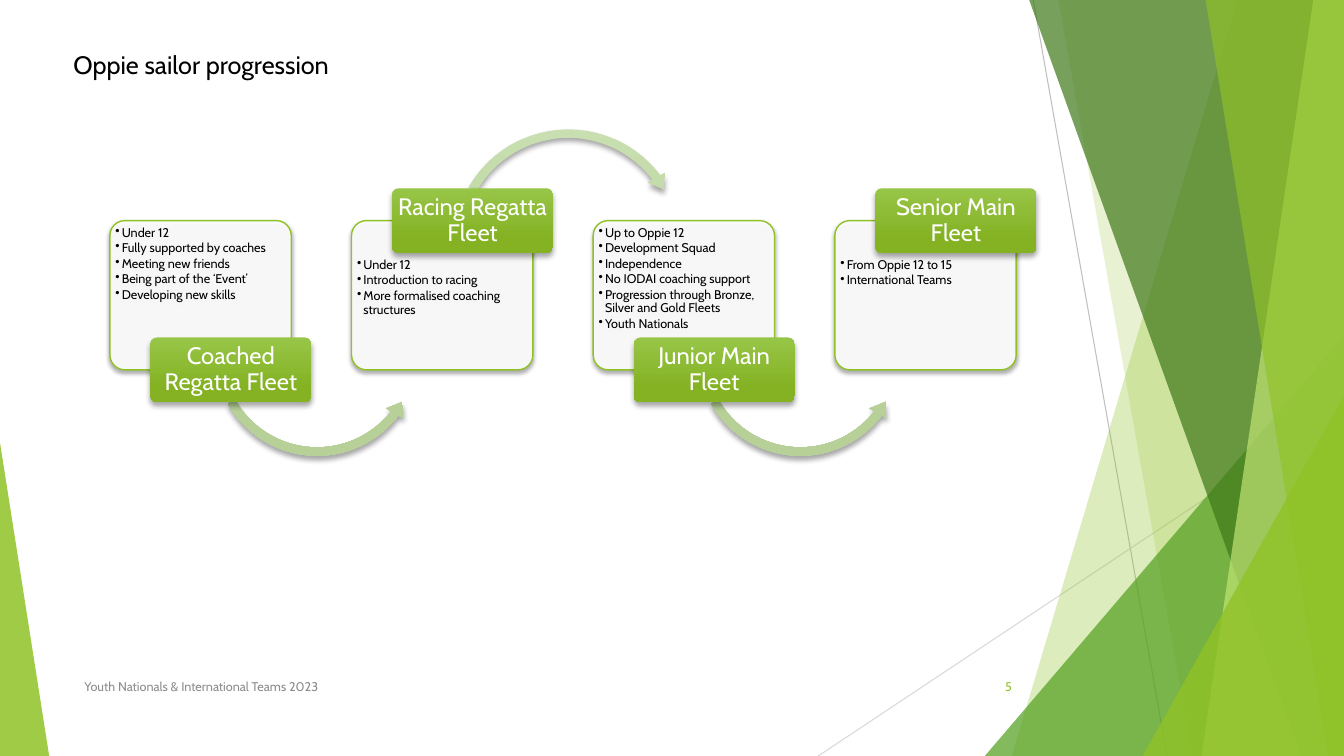
import dataclasses

import pptx
import pptx.dml.color
import pptx.enum.shapes
import pptx.enum.text
import pptx.oxml
import pptx.oxml.ns
import pptx.util

Cm = pptx.util.Cm
Pt = pptx.util.Pt
SHAPES = pptx.enum.shapes.MSO_SHAPE
ALIGN = pptx.enum.text.PP_ALIGN
ANCHOR = pptx.enum.text.MSO_ANCHOR
qn = pptx.oxml.ns.qn


@dataclasses.dataclass(frozen=True)
class Theme:
    font: str = "Cabin"
    title_size: float = 18
    label_size: float = 17
    small_size: float = 9
    black: str = "000000"
    white: str = "FFFFFF"
    grey: str = "8C8C8C"
    green: str = "90C226"
    leaf: str = "54A021"
    forest: str = "3F7819"
    lime: str = "C0E474"
    label_gradient: tuple = ("97C547", "84B223")
    arrow_gradient: tuple = ("C9DFB1", "B6D098")


THEME = Theme()
WIDTH, HEIGHT = 33.87, 19.05

# Fleet name, label above the card, what the fleet offers
FLEETS = [
    ("Coached Regatta Fleet", False,
     ["Under 12", "Fully supported by coaches", "Meeting new friends",
      "Being part of the ‘Event’", "Developing new skills"]),
    ("Racing Regatta Fleet", True,
     ["Under 12", "Introduction to racing", "More formalised coaching structures"]),
    ("Junior Main Fleet", False,
     ["Up to Oppie 12", "Development Squad", "Independence", "No IODAI coaching support",
      "Progression through Bronze, Silver and Gold Fleets", "Youth Nationals"]),
    ("Senior Main Fleet", True, ["From Oppie 12 to 15", "International Teams"]),
]


def rgb(colour):
    return pptx.dml.color.RGBColor.from_string(colour)


def apply(target, formats):
    for name, value in formats.items():
        setattr(target, name, value)


def add_xml(parent, tag, **attributes):
    child = pptx.oxml.parse_xml(f'<{tag} {pptx.oxml.ns.nsdecls("a")}/>')
    for name, value in attributes.items():
        child.set(name, str(value))
    parent.append(child)
    return child


def fill_solid(shape, colour, opacity):
    shape.fill.solid()
    shape.fill.fore_color.rgb = rgb(colour)
    colour_xml = shape.fill._xPr.find(qn("a:solidFill"))[0]
    add_xml(colour_xml, "a:alpha", val=opacity * 1000)


def fill_gradient(shape, colours):
    shape.fill.gradient()
    shape.fill.gradient_angle = 270
    for stop, colour, position in zip(shape.fill.gradient_stops, colours, (0, 0.78)):
        apply(stop, {"position": position})
        stop.color.rgb = rgb(colour)


def cast_shadow(shape, blur, distance):
    effects = shape._element.spPr.find(qn("a:effectLst"))
    shadow = add_xml(effects, "a:outerShdw", blurRad=Pt(blur), dist=Pt(distance),
                     dir=90 * 60000, rotWithShape=0)
    add_xml(add_xml(shadow, "a:srgbClr", val=THEME.black), "a:alpha", val=35000)


def add_preset(slide, preset, box, adjustments):
    shape = slide.shapes.add_shape(preset, *map(Cm, box))
    shape.shadow.inherit = False
    shape.line.fill.background()
    for index, value in enumerate(adjustments):
        shape.adjustments[index] = value
    return shape


def write(paragraph, text, size, colour, **formats):
    paragraph.text = text
    apply(paragraph, formats)
    apply(paragraph.runs[0].font, {"name": THEME.font, "size": Pt(size)})
    paragraph.runs[0].font.color.rgb = rgb(colour)


def add_text(slide, box, text, size, colour, anchor, align=ALIGN.LEFT):
    frame = slide.shapes.add_textbox(*map(Cm, box)).text_frame
    apply(frame, {"word_wrap": True, "vertical_anchor": anchor})
    write(frame.paragraphs[0], text, size, colour, alignment=align)


def draw_backdrop(slide, width, height):
    # Thin crossing lines
    for start, end, colour in [((26.04, 0), (29.41, height), "BFBFBF"),
                               ((width, 10.24), (20.62, height), "D9D9D9")]:
        ray = slide.shapes.add_connector(pptx.enum.shapes.MSO_CONNECTOR.STRAIGHT,
                                         *map(Cm, start + end))
        ray.line.color.rgb = rgb(colour)
        ray.line.width = Pt(0.75)
        add_xml(ray._element.spPr, "a:effectLst")

    def band(top_x, bottom_x, colour, opacity):
        corners = [(top_x, -0.02), (width, -0.02), (width, height), (bottom_x, height)]
        points = [(Cm(x), Cm(y)) for x, y in corners]
        builder = slide.shapes.build_freeform(*points[0])
        builder.add_line_segments(points[1:], close=True)
        shape = builder.convert_to_shape()
        shape.shadow.inherit = False
        shape.line.fill.background()
        fill_solid(shape, colour, opacity)

    def wedge(left, top, right, apex, colour, opacity):
        box = (left, top, right - left, height - top)
        fill_solid(add_preset(slide, SHAPES.ISOSCELES_TRIANGLE, box, [apex]), colour, opacity)

    # Overlapping bands and wedges, back to front
    band(31.19, 25.5, THEME.green, 30)
    band(26.67, 30.05, THEME.green, 20)
    wedge(24.82, 8.46, width, 1, THEME.leaf, 72)
    band(25.93, 32.79, THEME.forest, 70)
    band(33.1, 30.28, THEME.lime, 70)
    band(30.38, 33.48, THEME.green, 65)
    wedge(28.8, 9.98, width, 1, THEME.green, 80)
    wedge(0, 11.15, 1.24, 0, THEME.green, 85)


def draw_fleet(slide, box, name, label_above, points, has_next):
    left, top, width, height = box
    label_width, label_height = 4.06, 1.63

    # Card with bullet points
    card = add_preset(slide, SHAPES.ROUNDED_RECTANGLE, box, [0.1])
    fill_solid(card, THEME.white, 90)
    card.line.color.rgb = rgb(THEME.green)
    card.line.width = Pt(1)
    cast_shadow(card, 3, 2)
    apply(card.text_frame, {
        "word_wrap": True, "vertical_anchor": ANCHOR.TOP,
        "margin_left": Cm(0.03), "margin_right": Cm(0.03), "margin_bottom": Cm(0.03),
        "margin_top": Cm(0.03 + (label_height / 2 if label_above else 0))})
    for index, point in enumerate(points):
        paragraph = (card.text_frame.add_paragraph() if index
                     else card.text_frame.paragraphs[0])
        properties = paragraph._p.get_or_add_pPr()
        properties.set("marL", str(Cm(0.16)))
        properties.set("indent", str(-Cm(0.16)))
        add_xml(properties, "a:buChar", char="•")
        write(paragraph, point, THEME.small_size, THEME.black, level=1,
              alignment=ALIGN.LEFT, line_spacing=0.9, space_after=Pt(1.35))

    # Curved arrow to the next fleet
    if has_next:
        if label_above:
            preset, dx, dy, size = SHAPES.CIRCULAR_ARROW, 2.44, -2.44, 6.05
            bends = [0.035, 4.384, 193.861, 125.755, 0.041]
        else:
            preset, dx, dy, size = SHAPES.LEFT_CIRCULAR_ARROW, 2.49, 0.61, 5.46
            bends = [0.039, 4.898, 22.653, 90.245, 0.046]
        arrow = add_preset(slide, preset, (left + dx, top + dy, size, size), bends)
        fill_gradient(arrow, THEME.arrow_gradient)
        cast_shadow(arrow, 4, 3)

    # Name label centred on the card's edge
    edge = top if label_above else top + height
    label = add_preset(slide, SHAPES.ROUNDED_RECTANGLE,
                       (left + 1.02, edge - label_height / 2, label_width, label_height), [0.1])
    fill_gradient(label, THEME.label_gradient)
    cast_shadow(label, 4, 3)
    apply(label.text_frame, {
        "word_wrap": True, "vertical_anchor": ANCHOR.MIDDLE,
        "margin_left": Cm(0.1), "margin_right": Cm(0.1),
        "margin_top": Cm(0.05), "margin_bottom": Cm(0.05)})
    write(label.text_frame.paragraphs[0], name, THEME.label_size, THEME.white,
          alignment=ALIGN.CENTER, line_spacing=0.9)


def draw_progression(slide, left, top, pitch):
    for index, (name, label_above, points) in enumerate(FLEETS):
        draw_fleet(slide, (left + index * pitch, top, 4.57, 3.76), name, label_above,
                   points, index < len(FLEETS) - 1)


def main():
    deck = pptx.Presentation()
    apply(deck, {"slide_width": Cm(WIDTH), "slide_height": Cm(HEIGHT)})
    slide = deck.slides.add_slide(deck.slide_layouts[6])
    draw_backdrop(slide, WIDTH, HEIGHT)
    # Footer, page number and title
    add_text(slide, (1.88, 16.79, 17.5, 1.02), "Youth Nationals & International Teams 2023",
             THEME.small_size, THEME.grey, ANCHOR.MIDDLE)
    add_text(slide, (23.85, 16.79, 1.9, 1.02), "5", THEME.small_size, THEME.green,
             ANCHOR.MIDDLE, ALIGN.RIGHT)
    add_text(slide, (1.6, 1.12, 19.41, 1.02), "Oppie sailor progression",
             THEME.title_size, THEME.black, ANCHOR.TOP)
    draw_progression(slide, 2.77, 5.56, 6.09)
    deck.save("out.pptx")


if __name__ == "__main__":
    main()
